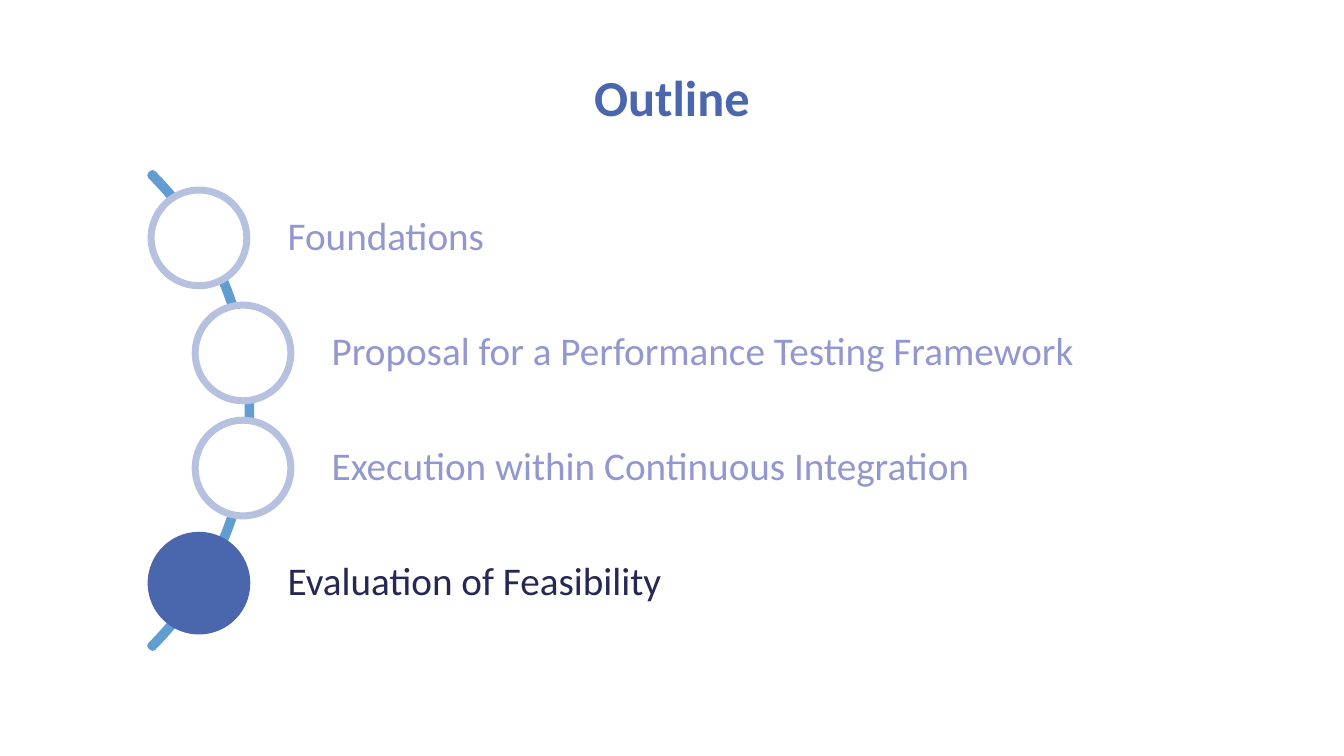
from pptx import Presentation
from pptx.dml.color import RGBColor
from pptx.enum.shapes import MSO_SHAPE
from pptx.enum.text import MSO_ANCHOR, PP_ALIGN
from pptx.util import Cm, Pt

ARC, RECTANGLE, CIRCLE = MSO_SHAPE.BLOCK_ARC, MSO_SHAPE.RECTANGLE, MSO_SHAPE.OVAL
LEFT, CENTER = PP_ALIGN.LEFT, PP_ALIGN.CENTER
MIDDLE, BOTTOM = MSO_ANCHOR.MIDDLE, MSO_ANCHOR.BOTTOM

BLUE, PALE_BLUE, ARC_BLUE = "4A66AC", "B5C1DF", "629DD1"
NAVY, LAVENDER, WHITE = "242852", "9297CF", "FFFFFF"


def add_outlined(group, kind, box, line, width, fill=None):
    """Add a preset shape; box is left, top, width and height in cm."""
    shape = group.shapes.add_shape(kind, *[Cm(length) for length in box])
    shape.shadow.inherit = False
    shape.line.color.rgb = RGBColor.from_string(line)
    shape.line.width = Pt(width)
    if fill:
        shape.fill.solid()
        shape.fill.fore_color.rgb = RGBColor.from_string(fill)
    else:
        shape.fill.background()
    return shape


def write(frame, text, size, color, align, anchor, bold=False):
    frame.word_wrap = True
    frame.vertical_anchor = anchor
    paragraph = frame.paragraphs[0]
    paragraph.alignment = align
    paragraph.line_spacing = 0.9
    run = paragraph.add_run()
    run.text = text
    run.font.name = "Calibri"
    run.font.size = Pt(size)
    run.font.bold = bold
    run.font.color.rgb = RGBColor.from_string(color)


prs = Presentation()
prs.slide_width, prs.slide_height = Cm(33.87), Cm(19.05)
slide = prs.slides.add_slide(prs.slide_layouts[5])

title = slide.shapes.title
title.left, title.top, title.width, title.height = Cm(3.6), Cm(1.09), Cm(26.67), Cm(2.26)
write(title.text_frame, "Outline", 36, BLUE, CENTER, BOTTOM, bold=True)

outline = slide.shapes.add_group_shape()
arc = add_outlined(outline, ARC, (-10.57, 1.9, 16.89, 16.89), ARC_BLUE, 5)
# Start angle, end angle, thickness
for index, value in enumerate((189, 27, 0.004)):
    arc.adjustments[index] = value

OUTER, INNER = 5.72, 6.83
RIGHT_EDGE, FIRST_TOP, ROW_STEP, ROW_HEIGHT = 30.81, 5.03, 2.9, 1.93
CIRCLE_SIZE, CIRCLE_OFFSET = 2.41, 1.91
CURRENT = "Evaluation of Feasibility"
topics = [
    ("Foundations", OUTER),
    ("Proposal for a Performance Testing Framework", INNER),
    ("Execution within Continuous Integration", INNER),
    (CURRENT, OUTER),
]

for row, (topic, left) in enumerate(topics):
    top = FIRST_TOP + row * ROW_STEP
    if topic == CURRENT:
        text_color, ring, fill = NAVY, BLUE, BLUE
    else:
        text_color, ring, fill = LAVENDER, PALE_BLUE, WHITE

    label = add_outlined(outline, RECTANGLE, (left, top, RIGHT_EDGE - left, ROW_HEIGHT), WHITE, 1)
    frame = label.text_frame
    frame.margin_left = Cm(1.53)
    frame.margin_right = frame.margin_top = frame.margin_bottom = Cm(0.2)
    write(frame, topic, 28, text_color, LEFT, MIDDLE)

    circle_top = top - (CIRCLE_SIZE - ROW_HEIGHT) / 2
    add_outlined(outline, CIRCLE,
                 (left - CIRCLE_OFFSET, circle_top, CIRCLE_SIZE, CIRCLE_SIZE), ring, 5, fill)

prs.save("out.pptx")
